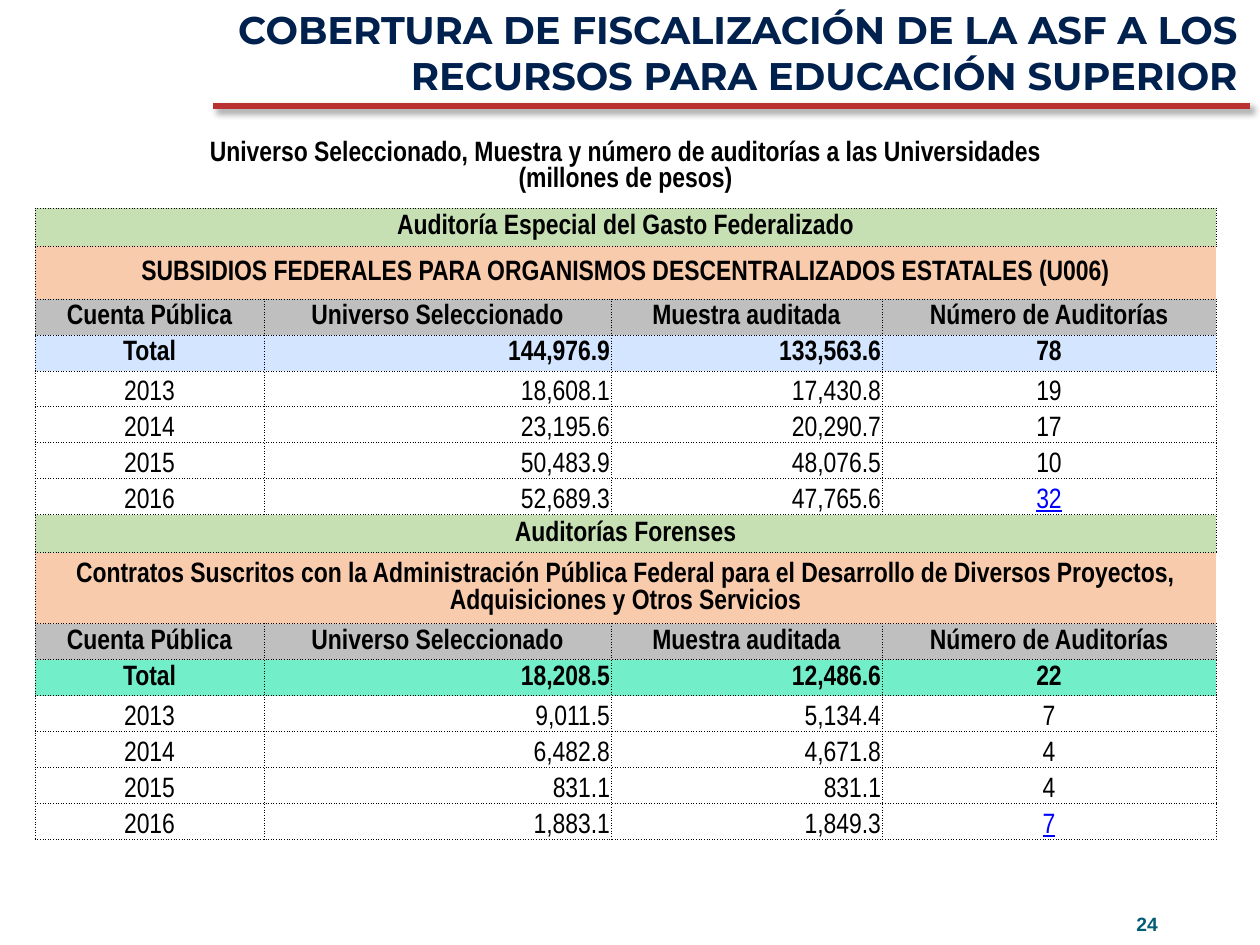
from lxml import etree
from pptx import Presentation
from pptx import util as u
from pptx.dml.color import RGBColor
from pptx.enum import shapes, text
from pptx.oxml import ns

# Content
TITLE = "COBERTURA DE FISCALIZACIÓN DE LA ASF A LOS RECURSOS PARA EDUCACIÓN SUPERIOR"
CAPTION = ("Universo Seleccionado, Muestra y número de auditorías a las Universidades"
           "\v(millones de pesos)")
PAGE_NUMBER = "24"
HEADINGS = ["Cuenta Pública", "Universo Seleccionado", "Muestra auditada",
            "Número de Auditorías"]
SECTIONS = [
    {"name": "Auditoría Especial del Gasto Federalizado",
     "topic": "SUBSIDIOS FEDERALES PARA ORGANISMOS DESCENTRALIZADOS ESTATALES (U006)",
     "topic_height": 53, "total_fill": "D4E6FF",
     "total": ["Total", "144,976.9", "133,563.6", "78"],
     "years": [["2013", "18,608.1", "17,430.8", "19"],
               ["2014", "23,195.6", "20,290.7", "17"],
               ["2015", "50,483.9", "48,076.5", "10"],
               ["2016", "52,689.3", "47,765.6", "32"]]},
    {"name": "Auditorías Forenses",
     "topic": "Contratos Suscritos con la Administración Pública Federal para el "
              "Desarrollo de Diversos Proyectos, Adquisiciones y Otros Servicios",
     "topic_height": 71, "total_fill": "72EFC8",
     "total": ["Total", "18,208.5", "12,486.6", "22"],
     "years": [["2013", "9,011.5", "5,134.4", "7"],
               ["2014", "6,482.8", "4,671.8", "4"],
               ["2015", "831.1", "831.1", "4"],
               ["2016", "1,883.1", "1,849.3", "7"]]},
]
COLUMNS = [229, 347, 271, 334]
ALIGNS = [text.PP_ALIGN.CENTER, text.PP_ALIGN.RIGHT, text.PP_ALIGN.RIGHT,
          text.PP_ALIGN.CENTER]
CAPTION_HEIGHT, NAME_HEIGHT, ROW_HEIGHT = 83, 38, 36
BLACK, LINK = "000000", "0000FF"


def px(value):
    return u.Emu(round(value * 914400 / 126))


def rgb(value):
    return RGBColor.from_string(value)


def style(paragraph, font, size, color, bold=True):
    for span in paragraph.runs:
        span.font.name = font
        span.font.size = u.Pt(size)
        span.font.bold = bold
        span.font.color.rgb = rgb(color)


def add_text(page, words, left, top, width, height):
    box = page.shapes.add_textbox(px(left), px(top), px(width), px(height))
    box.text_frame.word_wrap = True
    box.text_frame.text = words
    return box.text_frame.paragraphs[0]


def set_borders(cell, sides):
    """Dotted lines on the given sides, none on the others."""
    properties = cell._tc.get_or_add_tcPr()
    for index, side in enumerate("LRTB"):
        line = etree.Element(ns.qn(f"a:ln{side}"), w=str(u.Pt(0.5)))
        if side in sides:
            fill = etree.SubElement(line, ns.qn("a:solidFill"))
            etree.SubElement(fill, ns.qn("a:srgbClr"), val=BLACK)
            etree.SubElement(line, ns.qn("a:prstDash"), val="sysDot")
        else:
            etree.SubElement(line, ns.qn("a:noFill"))
        properties.insert(index, line)


def fill_cell(cell, words, align, fill, bold, sides):
    cell.margin_left = cell.margin_right = cell.margin_top = px(1)
    cell.margin_bottom = 0
    cell.vertical_anchor = text.MSO_ANCHOR.MIDDLE if bold else text.MSO_ANCHOR.BOTTOM
    if fill:
        cell.fill.solid()
        cell.fill.fore_color.rgb = rgb(fill)
    else:
        cell.fill.background()
    set_borders(cell, sides)
    if words:
        cell.text_frame.text = words
        paragraph = cell.text_frame.paragraphs[0]
        paragraph.alignment = align
        style(paragraph, "Arial Narrow", 16, BLACK, bold)


def table_rows():
    """Each row: texts, height, fill, bold, bordered sides."""
    rows = [([CAPTION], CAPTION_HEIGHT, None, True, "B")]
    for section in SECTIONS:
        rows += [
            ([section["name"]], NAME_HEIGHT, "C6E0B4", True, "LRTB"),
            ([section["topic"]], section["topic_height"], "F8CBAD", True, "LTB"),
            (HEADINGS, ROW_HEIGHT, "BFBFBF", True, "LRTB"),
            (section["total"], ROW_HEIGHT, section["total_fill"], True, "LRTB"),
        ]
        rows += [(year, ROW_HEIGHT, None, False, "LRTB") for year in section["years"]]
    return rows


def add_audit_table(page):
    rows = table_rows()
    heights = [row[1] for row in rows]
    frame = page.shapes.add_table(len(rows), len(COLUMNS), px(35), px(125),
                                  px(sum(COLUMNS)), px(sum(heights)))
    table = frame.table
    table.first_row = table.horz_banding = False
    for column, width in zip(table.columns, COLUMNS):
        column.width = px(width)
    for index, (words, height, fill, bold, sides) in enumerate(rows):
        table.rows[index].height = px(height)
        merged = len(words) == 1
        aligns = [text.PP_ALIGN.CENTER] * len(COLUMNS) if merged or words == HEADINGS else ALIGNS
        for column, align in enumerate(aligns):
            content = words[column] if column < len(words) else ""
            fill_cell(table.cell(index, column), content, align, fill, bold, sides)
        if merged:
            table.cell(index, 0).merge(table.cell(index, len(COLUMNS) - 1))
        # The last year's audit count looks like a link
        if words[0] == "2016":
            font = table.cell(index, 3).text_frame.paragraphs[0].runs[0].font
            font.color.rgb = rgb(LINK)
            font.underline = True


def add_title_rule(page):
    rule = page.shapes.add_connector(shapes.MSO_CONNECTOR.STRAIGHT,
                                     px(1250), px(106), px(213), px(106))
    rule.line.color.rgb = rgb("B93131")
    rule.line.width = u.Pt(3.5)
    effects = etree.SubElement(rule._element.spPr, ns.qn("a:effectLst"))
    shadow = etree.SubElement(effects, ns.qn("a:outerShdw"), blurRad=str(u.Pt(4)),
                              dist=str(u.Pt(3)), dir="2700000", rotWithShape="0")
    color = etree.SubElement(shadow, ns.qn("a:srgbClr"), val=BLACK)
    etree.SubElement(color, ns.qn("a:alpha"), val="40000")


def main():
    deck = Presentation()
    deck.slide_width, deck.slide_height = px(1260), px(945)
    page = deck.slides.add_slide(deck.slide_layouts[6])

    # Page number
    number = add_text(page, PAGE_NUMBER, 1124, 906, 127, 39)
    style(number, "Arial", 11, "045D75")

    add_audit_table(page)

    # Title with a hanging indent
    title = add_text(page, TITLE, 54, 0, 1196, 106)
    title.alignment = text.PP_ALIGN.RIGHT
    indents = title._p.get_or_add_pPr()
    indents.set("marL", str(px(137)))
    indents.set("indent", str(px(-38)))
    style(title, "Montserrat", 22, "00204E")

    add_title_rule(page)
    deck.save("out.pptx")


if __name__ == "__main__":
    main()
